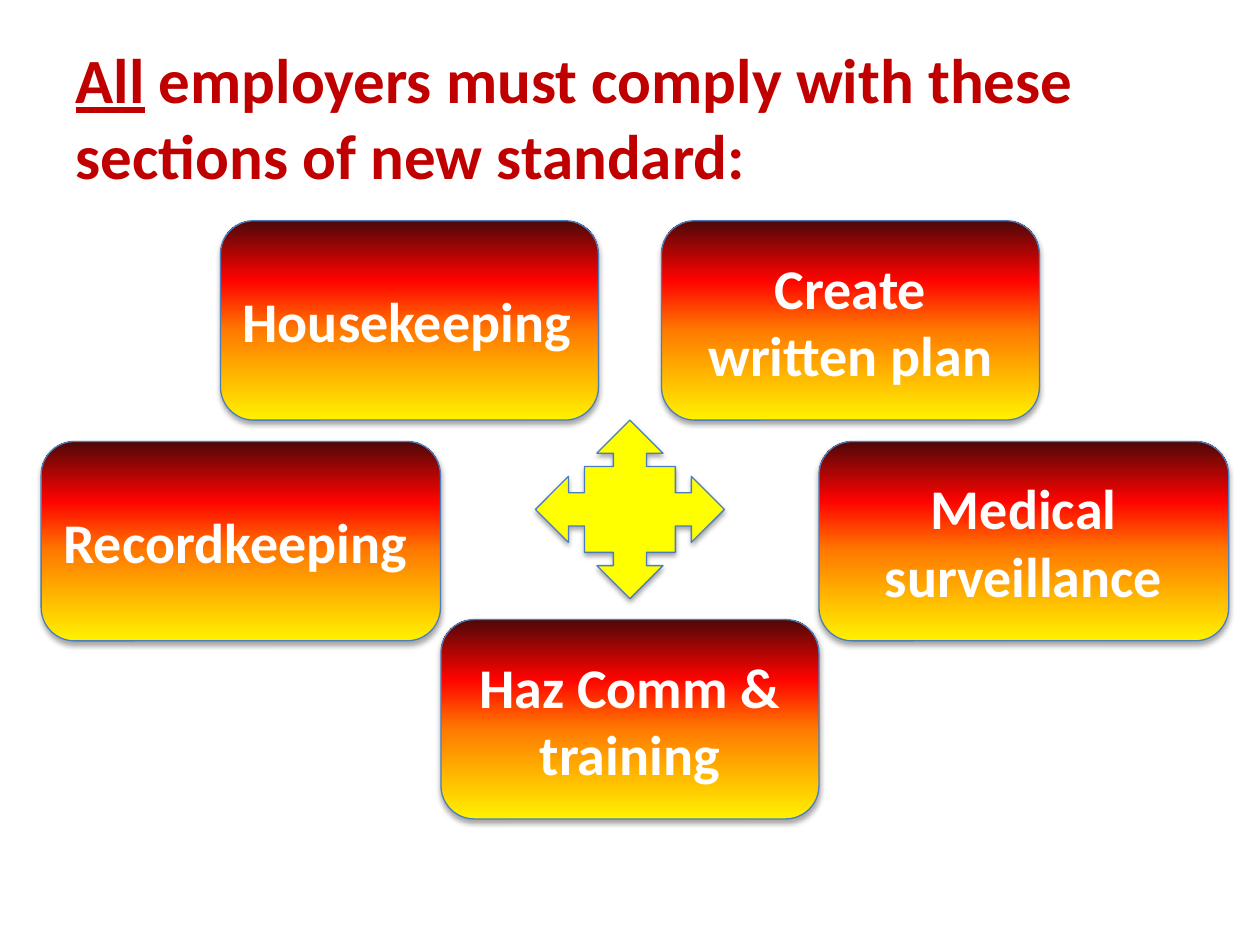
from dataclasses import dataclass

from lxml import etree
from pptx import Presentation
from pptx.dml.color import RGBColor
from pptx.enum.shapes import MSO_SHAPE
from pptx.enum.text import MSO_ANCHOR, PP_ALIGN
from pptx.oxml.ns import qn
from pptx.util import Cm, Pt

ROUND = MSO_SHAPE.ROUNDED_RECTANGLE
QUAD = MSO_SHAPE.QUAD_ARROW_CALLOUT
MIDDLE = MSO_ANCHOR.MIDDLE
LEFT, CENTER = PP_ALIGN.LEFT, PP_ALIGN.CENTER


@dataclass(frozen=True)
class Theme:
    font: str = "Calibri"
    head: str = "C00000"
    label: str = "FFFFFF"
    edge: str = "4B7EBC"
    arrow: str = "FFFF00"
    shade: str = "000000"
    fire: tuple = ((0, "FFF200"), (45, "FF7A00"), (70, "FF0300"), (100, "4D0808"))
    head_size: int = 36
    label_size: int = 32


THEME = Theme()


def put_text(para, text, size, color, align=LEFT, hang=None, under=False):
    """Add a bold run to a paragraph."""
    para.alignment = align
    if hang:
        props = para._p.get_or_add_pPr()
        props.set("marL", str(hang))
        props.set("indent", str(-hang))
    run = para.add_run()
    run.text = text
    font = run.font
    font.name, font.size = THEME.font, Pt(size)
    font.bold, font.underline = True, under
    font.color.rgb = RGBColor.from_string(color)


def add_tint(parent, color):
    return etree.SubElement(parent, qn("a:srgbClr"), val=color)


def add_shade(shape):
    """Give the shape a soft shadow straight below it."""
    shape.shadow.inherit = False
    effects = shape._element.spPr.find(qn("a:effectLst"))
    outer = etree.SubElement(
        effects, qn("a:outerShdw"), blurRad=str(Pt(3.1)), dist=str(Pt(1.8)),
        dir="5400000", rotWithShape="0")
    etree.SubElement(add_tint(outer, THEME.shade), qn("a:alpha"), val="35000")


def fill_fire(shape):
    """Blend the fire colours from the bottom edge up."""
    shape.fill.gradient()
    shape.fill.gradient_angle = 90
    stops = next(shape._element.spPr.iter(qn("a:gsLst")))
    for stop in list(stops):
        stops.remove(stop)
    for place, color in THEME.fire:
        stop = etree.SubElement(stops, qn("a:gs"), pos=str(place * 1000))
        add_tint(stop, color)


def add_block(slide, kind, box):
    shape = slide.shapes.add_shape(kind, *box)
    shape.line.color.rgb = RGBColor.from_string(THEME.edge)
    shape.line.width = Pt(0.75)
    add_shade(shape)
    return shape


def add_title(slide, box):
    title = slide.shapes.title
    title.left, title.top, title.width, title.height = box
    frame = title.text_frame
    frame.word_wrap, frame.vertical_anchor = True, MIDDLE
    para = frame.paragraphs[0]
    put_text(para, "All", THEME.head_size, THEME.head, under=True)
    put_text(para, " employers must comply with these sections of new standard:",
             THEME.head_size, THEME.head)


def add_card(slide, box, lines, align, hang):
    card = add_block(slide, ROUND, box)
    fill_fire(card)
    frame = card.text_frame
    frame.word_wrap, frame.vertical_anchor = True, MIDDLE
    for num, line in enumerate(lines):
        para = frame.add_paragraph() if num else frame.paragraphs[0]
        put_text(para, line, THEME.label_size, THEME.label, align, hang)


def add_ring(slide, box):
    """Five cards around a four-way arrow."""
    left, top, width, height = box
    tall, wide, hang = Cm(4.02), Cm(7.62), Cm(1.43)
    mid = left + Cm(11.87)
    half = Cm(0.635)  # half the gap between the top cards
    row = top + Cm(4.45)
    base = top + height - tall
    side = Cm(8.26)
    cards = (
        (mid - half * 2.5 - wide + half * 1.5, top, wide, ("Housekeeping",), LEFT, hang),
        (left + width - side, row, side, ("Medical surveillance",), CENTER, None),
        (left, row, Cm(8.05), ("Recordkeeping",), LEFT, hang),
        (mid - wide / 2, base, wide, ("Haz Comm &", "training"), CENTER, hang),
        (mid + half, top, wide, ("Create written plan",), CENTER, None),
    )
    for x, y, w, lines, align, indent in cards:
        add_card(slide, (int(x), y, w, tall), lines, align, indent)

    # Arrow in the centre
    span = Cm(3.81)
    arrow = add_block(slide, QUAD, (mid - span // 2, top + tall, span, Cm(3.6)))
    arrow.fill.solid()
    arrow.fill.fore_color.rgb = RGBColor.from_string(THEME.arrow)


def main():
    deck = Presentation()
    deck.slide_width, deck.slide_height = Cm(25.4), Cm(19.05)
    slide = deck.slides.add_slide(deck.slide_layouts[5])
    add_title(slide, (Cm(1.27), Cm(0.76), Cm(22.86), Cm(3.18)))
    add_ring(slide, (Cm(0.83), Cm(4.45), Cm(23.94), Cm(12.06)))
    deck.save("out.pptx")


if __name__ == "__main__":
    main()
